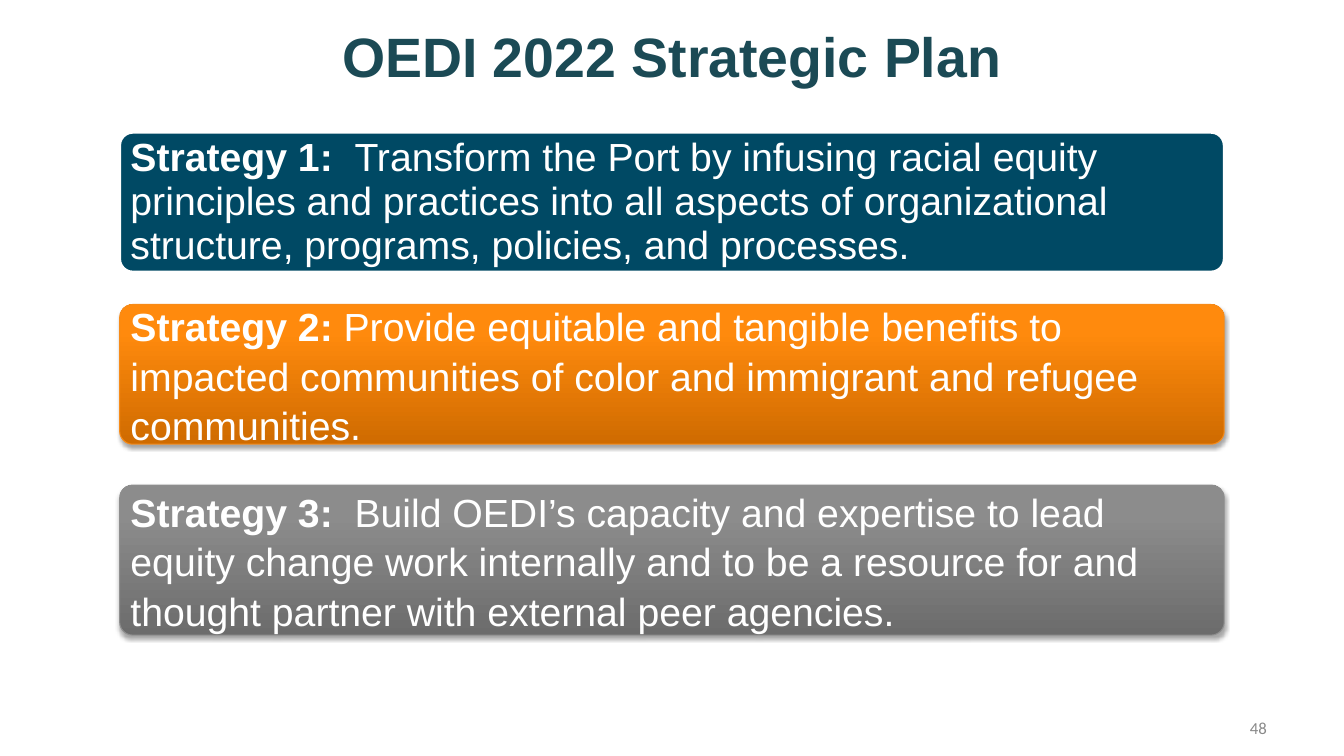
from copy import deepcopy
from lxml.etree import SubElement
from pptx import Presentation
from pptx.dml.color import RGBColor
from pptx.enum.shapes import MSO_SHAPE
from pptx.enum.text import MSO_ANCHOR, PP_ALIGN
from pptx.oxml.ns import qn
from pptx.util import Pt

TITLE = "OEDI 2022 Strategic Plan"
PAGE = "48"
STRATEGIES = [
    dict(label="Strategy 1:  ", top=94.5, height=99.8, spacing=0.93, style="teal",
         text="Transform the Port by infusing racial equity principles and practices "
              "into all aspects of organizational structure, programs, policies, and processes."),
    dict(label="Strategy 2: ", top=217.5, height=99.8, spacing=1.05, style="orange",
         text="Provide equitable and tangible benefits to impacted communities of color "
              "and immigrant and refugee communities."),
    dict(label="Strategy 3:", top=346.5, height=107.2, spacing=1.05, style="gray",
         text="  Build OEDI’s capacity and expertise to lead equity change work internally "
              "and to be a resource for and thought partner with external peer agencies."),
]
THEME = dict(
    font="Arial", page_font="Calibri",
    title_size=39.6, body_size=28, page_size=12,
    title="1B4A55", page="898989", text="FFFFFF", shadow="000000",
    teal=dict(fill=["004964"], line="FFFFFF", width=2),
    orange=dict(fill=["CF6B00", "FF8A0D", "FF8B0F"], line="F78B18", width=0.75),
    gray=dict(fill=["6C6C6C", "8C8C8C", "8D8D8D"], line="8E8E8E", width=0.75),
)
STOPS = [0, 0.8, 1]
CARD_LEFT, CARD_WIDTH, RADIUS = 85.5, 789, 9.4


def style_run(r, font, size, color, bold=False):
    r.font.name, r.font.size, r.font.bold = font, Pt(size), bold
    r.font.color.rgb = RGBColor.from_string(color)


def add_label(slide, box, text, align, *style):
    tf = slide.shapes.add_textbox(*map(Pt, box)).text_frame
    tf.word_wrap = True
    tf.vertical_anchor = MSO_ANCHOR.MIDDLE
    tf.text = text
    p = tf.paragraphs[0]
    p.alignment = align
    style_run(p.runs[0], *style)


def fill_gradient(sp, colors):
    sp.fill.gradient()
    sp.fill.gradient_angle = 90
    stops = sp._element.spPr.find(".//" + qn("a:gsLst"))
    stops.append(deepcopy(stops[-1]))
    for stop, position, color in zip(sp.fill.gradient_stops, STOPS, colors):
        stop.position = position
        stop.color.rgb = RGBColor.from_string(color)


def add_shadow(sp):
    effects = sp._element.spPr.find(qn("a:effectLst"))
    shadow = SubElement(effects, qn("a:outerShdw"), blurRad=str(Pt(3.1)),
                        dist=str(Pt(1.8)), dir="5400000", rotWithShape="0")
    color = SubElement(shadow, qn("a:srgbClr"), val=THEME["shadow"])
    SubElement(color, qn("a:alpha"), val="35000")


def add_card(slide, item):
    style = THEME[item["style"]]
    box = (CARD_LEFT, item["top"], CARD_WIDTH, item["height"])
    sp = slide.shapes.add_shape(MSO_SHAPE.ROUNDED_RECTANGLE, *map(Pt, box))
    sp.adjustments[0] = RADIUS / item["height"]
    sp.shadow.inherit = False
    if len(style["fill"]) > 1:
        fill_gradient(sp, style["fill"])
        add_shadow(sp)
    else:
        sp.fill.solid()
        sp.fill.fore_color.rgb = RGBColor.from_string(style["fill"][0])
    sp.line.color.rgb = RGBColor.from_string(style["line"])
    sp.line.width = Pt(style["width"])

    tf = sp.text_frame
    tf.word_wrap = True
    tf.vertical_anchor = MSO_ANCHOR.MIDDLE
    tf.margin_left = tf.margin_right = Pt(5)
    tf.margin_top = tf.margin_bottom = Pt(4.5)
    p = tf.paragraphs[0]
    p.alignment = PP_ALIGN.LEFT
    p.line_spacing = item["spacing"]
    for part, bold in (("label", True), ("text", False)):
        r = p.add_run()
        r.text = item[part]
        style_run(r, THEME["font"], THEME["body_size"], THEME["text"], bold)


def main():
    prs = Presentation()
    prs.slide_width, prs.slide_height = Pt(960), Pt(540)
    slide = prs.slides.add_slide(prs.slide_layouts[6])
    add_label(slide, (48, 9.5, 864, 60), TITLE, PP_ALIGN.CENTER,
              THEME["font"], THEME["title_size"], THEME["title"], True)
    add_label(slide, (829.5, 505.5, 82.5, 28.8), PAGE, PP_ALIGN.RIGHT,
              THEME["page_font"], THEME["page_size"], THEME["page"])
    for item in STRATEGIES:
        add_card(slide, item)
    prs.save("out.pptx")


if __name__ == "__main__":
    main()
